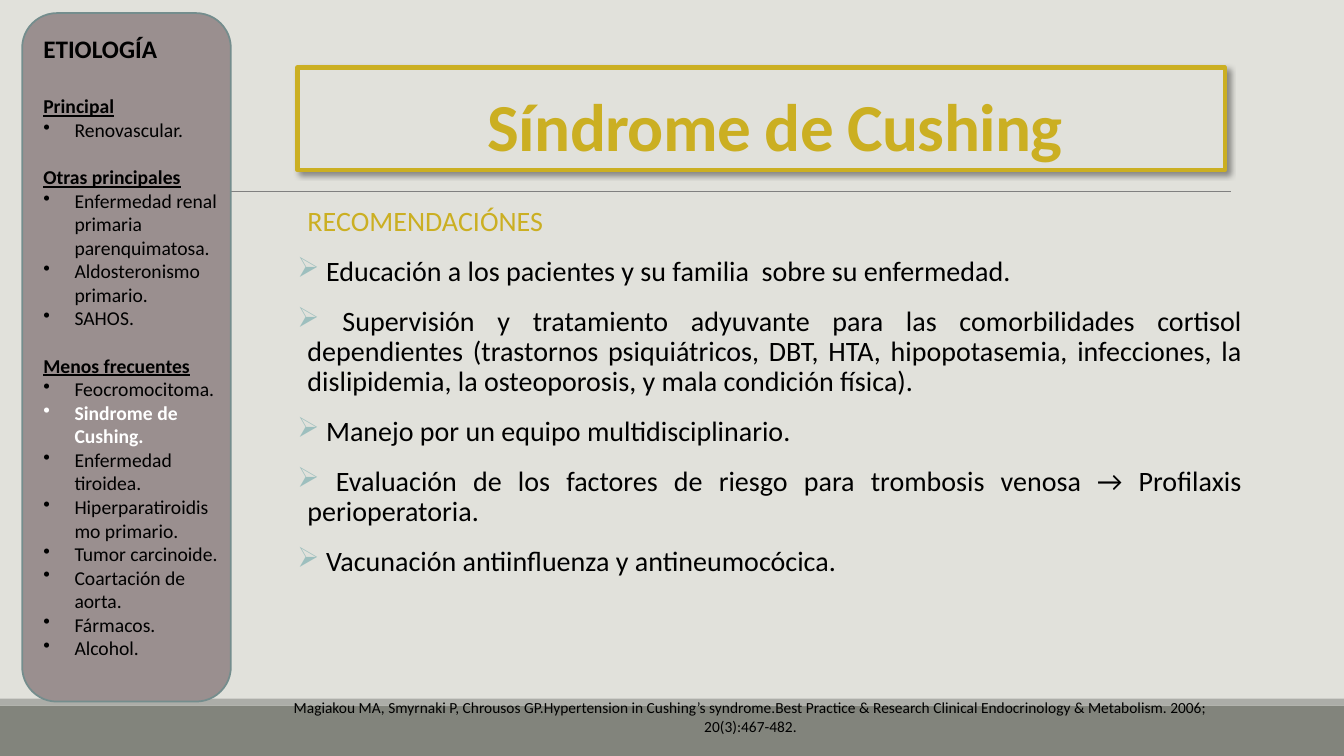
import pptx
import pptx.dml.color
import pptx.enum.shapes
import pptx.enum.text
import pptx.oxml
import pptx.oxml.ns
import pptx.util
from dataclasses import dataclass

TITLE = "Síndrome de Cushing"
SIDEBAR_TITLE = "ETIOLOGÍA"
CURRENT_CAUSE = "Sindrome de Cushing."
CAUSES = {
    "Principal": ["Renovascular."],
    "Otras principales": [
        "Enfermedad renal primaria parenquimatosa.",
        "Aldosteronismo primario.",
        "SAHOS.",
    ],
    "Menos frecuentes": [
        "Feocromocitoma.",
        CURRENT_CAUSE,
        "Enfermedad tiroidea.",
        "Hiperparatiroidismo primario.",
        "Tumor carcinoide.",
        "Coartación de aorta.",
        "Fármacos.",
        "Alcohol.",
    ],
}
ADVICE_TITLE = "RECOMENDACIÓNES"
ADVICE = [
    "Educación a los pacientes y su familia  sobre su enfermedad.",
    "Supervisión y tratamiento adyuvante para las comorbilidades cortisol dependientes "
    "(trastornos psiquiátricos, DBT, HTA, hipopotasemia, infecciones, la dislipidemia, "
    "la osteoporosis, y mala condición física).",
    "Manejo por un equipo multidisciplinario.",
    "Evaluación de los factores de riesgo para trombosis venosa → Profilaxis perioperatoria.",
    "Vacunación antiinfluenza y antineumocócica.",
]
CITATION = (
    "Magiakou MA, Smyrnaki P, Chrousos GP.Hypertension in Cushing’s syndrome."
    "Best Practice & Research Clinical Endocrinology & Metabolism. 2006; 20(3):467-482."
)

# Left, top, width, height as percentages of the slide
AREAS = {
    "footer": (0, 93.33, 100, 6.67),
    "footer_edge": (0, 92.4, 100, 0.93),
    "title": (22.13, 8.93, 69, 13.6),
    "panel": (1.65, 1.73, 15.53, 91.07),
    "causes": (2.48, 3.73, 14.63, 94.27),
    "advice": (22.13, 26.8, 70.28, 55.47),
    "citation": (19.28, 91.73, 73.13, 6.27),
}
RULE_LEFT, RULE_RIGHT, RULE_TOP = 9.83, 91.58, 25.33


@dataclass(frozen=True)
class Theme:
    font: str = "Calibri"
    page: str = "E1E1DB"
    footer: str = "82847C"
    footer_edge: str = "ACADA8"
    rule: str = "808080"
    accent: str = "CBAF22"
    panel: str = "9A8F8F"
    panel_line: str = "748D8D"
    bullet: str = "9DBFBE"
    text: str = "000000"
    current: str = "FFFFFF"
    title_size: int = 48
    advice_size: int = 20
    sidebar_title_size: int = 18
    causes_size: int = 14
    citation_size: int = 11
    line_height: float = 1.22


THEME = Theme()
ALIGN = pptx.enum.text.PP_ALIGN
SHAPE = pptx.enum.shapes.MSO_SHAPE
Pt, Inches = pptx.util.Pt, pptx.util.Inches
NAMESPACE = pptx.oxml.ns.nsdecls("a")

deck = pptx.Presentation()
deck.slide_width, deck.slide_height = Inches(13.33), Inches(7.5)
page = deck.slides.add_slide(deck.slide_layouts[5])


def rgb(colour):
    return pptx.dml.color.RGBColor.from_string(colour)


def across(share):
    return round(deck.slide_width * share / 100)


def down(share):
    return round(deck.slide_height * share / 100)


def area(name):
    left, top, width, height = AREAS[name]
    return across(left), down(top), across(width), down(height)


def add_xml(parent, markup):
    """Append an element whose root tag has no namespace declaration yet."""
    head, mark, rest = markup.partition(" ")
    parent.append(pptx.oxml.parse_xml(f"{head} {NAMESPACE}{mark}{rest}"))


def add_panel(name, kind, fill, line=None):
    panel = page.shapes.add_shape(kind, *area(name))
    panel.shadow.inherit = False
    panel.fill.solid()
    panel.fill.fore_color.rgb = rgb(fill)
    if line:
        panel.line.color.rgb = rgb(line)
        panel.line.width = Pt(1.25)
    else:
        panel.line.fill.background()


def add_text_box(name):
    frame = page.shapes.add_textbox(*area(name)).text_frame
    frame.word_wrap = True
    return frame


def add_para(frame, text, size, colour=THEME.text, bold=False, underline=False,
             align=ALIGN.LEFT, before=0):
    """Fill the empty first paragraph, or add one with space before it."""
    para = frame.paragraphs[0]
    if para.runs:
        para = frame.add_paragraph()
        para.space_before = Pt(before)
    para.alignment = align
    span = para.add_run()
    span.text = text
    font = span.font
    font.name, font.size, font.bold, font.underline = THEME.font, Pt(size), bold, underline
    font.color.rgb = rgb(colour)
    return para


def add_bullet(para, symbol, indent, colour=None):
    properties = para._p.get_or_add_pPr()
    properties.set("marL", str(Inches(indent)))
    properties.set("indent", str(-Inches(indent)))
    if colour:
        add_xml(properties, f'<a:buClr ><a:srgbClr val="{colour}"/></a:buClr>')
    add_xml(properties, f'<a:buChar char="{symbol}"/>')


def add_title():
    title = page.shapes.title
    title.left, title.top, title.width, title.height = area("title")
    title.fill.solid()
    title.fill.fore_color.rgb = rgb(THEME.page)
    title.line.color.rgb = rgb(THEME.accent)
    title.line.width = Pt(3)
    add_xml(title._element.spPr,
            f'<a:effectLst ><a:outerShdw blurRad="{Pt(4)}" dist="{Pt(3)}" dir="2700000" '
            'algn="tl" rotWithShape="0"><a:srgbClr val="000000"><a:alpha val="40000"/>'
            '</a:srgbClr></a:outerShdw></a:effectLst>')
    frame = title.text_frame
    frame.word_wrap = True
    frame.auto_size = pptx.enum.text.MSO_AUTO_SIZE.NONE
    frame.vertical_anchor = pptx.enum.text.MSO_ANCHOR.BOTTOM
    frame.margin_left = Inches(0.38)
    para = add_para(frame, TITLE, THEME.title_size, THEME.accent, bold=True, align=ALIGN.CENTER)
    para.line_spacing = 0.85
    para.runs[0]._r.get_or_add_rPr().set("spc", "-50")


def add_rule():
    rule = page.shapes.add_connector(
        pptx.enum.shapes.MSO_CONNECTOR.STRAIGHT,
        across(RULE_LEFT), down(RULE_TOP), across(RULE_RIGHT), down(RULE_TOP))
    rule.line.color.rgb = rgb(THEME.rule)
    rule.line.width = Pt(0.5)
    add_xml(rule._element.spPr, "<a:effectLst />")


def add_causes():
    frame = add_text_box("causes")
    add_para(frame, SIDEBAR_TITLE, THEME.sidebar_title_size, bold=True)
    gap_size = THEME.sidebar_title_size
    for group, causes in CAUSES.items():
        add_para(frame, group, THEME.causes_size, bold=True, underline=True,
                 before=gap_size * THEME.line_height)
        gap_size = THEME.causes_size
        for cause in causes:
            current = cause == CURRENT_CAUSE
            colour = THEME.current if current else THEME.text
            add_bullet(add_para(frame, cause, THEME.causes_size, colour, bold=current), "•", 0.31)


def add_advice():
    frame = add_text_box("advice")
    frame.margin_left = frame.margin_right = 0
    heading = add_para(frame, ADVICE_TITLE, THEME.advice_size, THEME.accent, align=ALIGN.JUSTIFY)
    heading._p.get_or_add_pPr().set("marL", str(Inches(0.1)))
    for advice in ADVICE:
        para = add_para(frame, f" {advice}", THEME.advice_size, align=ALIGN.JUSTIFY, before=12)
        add_bullet(para, "➢", 0.1, THEME.bullet)
    for para in frame.paragraphs:
        para.line_spacing = 0.9
        para.space_after = Pt(2)


page.background.fill.solid()
page.background.fill.fore_color.rgb = rgb(THEME.page)
add_panel("footer", SHAPE.RECTANGLE, THEME.footer)
add_panel("footer_edge", SHAPE.RECTANGLE, THEME.footer_edge)
add_rule()
add_title()
add_panel("panel", SHAPE.ROUNDED_RECTANGLE, THEME.panel, THEME.panel_line)
add_causes()
add_advice()
add_para(add_text_box("citation"), CITATION, THEME.citation_size, align=ALIGN.CENTER)
deck.save("out.pptx")
